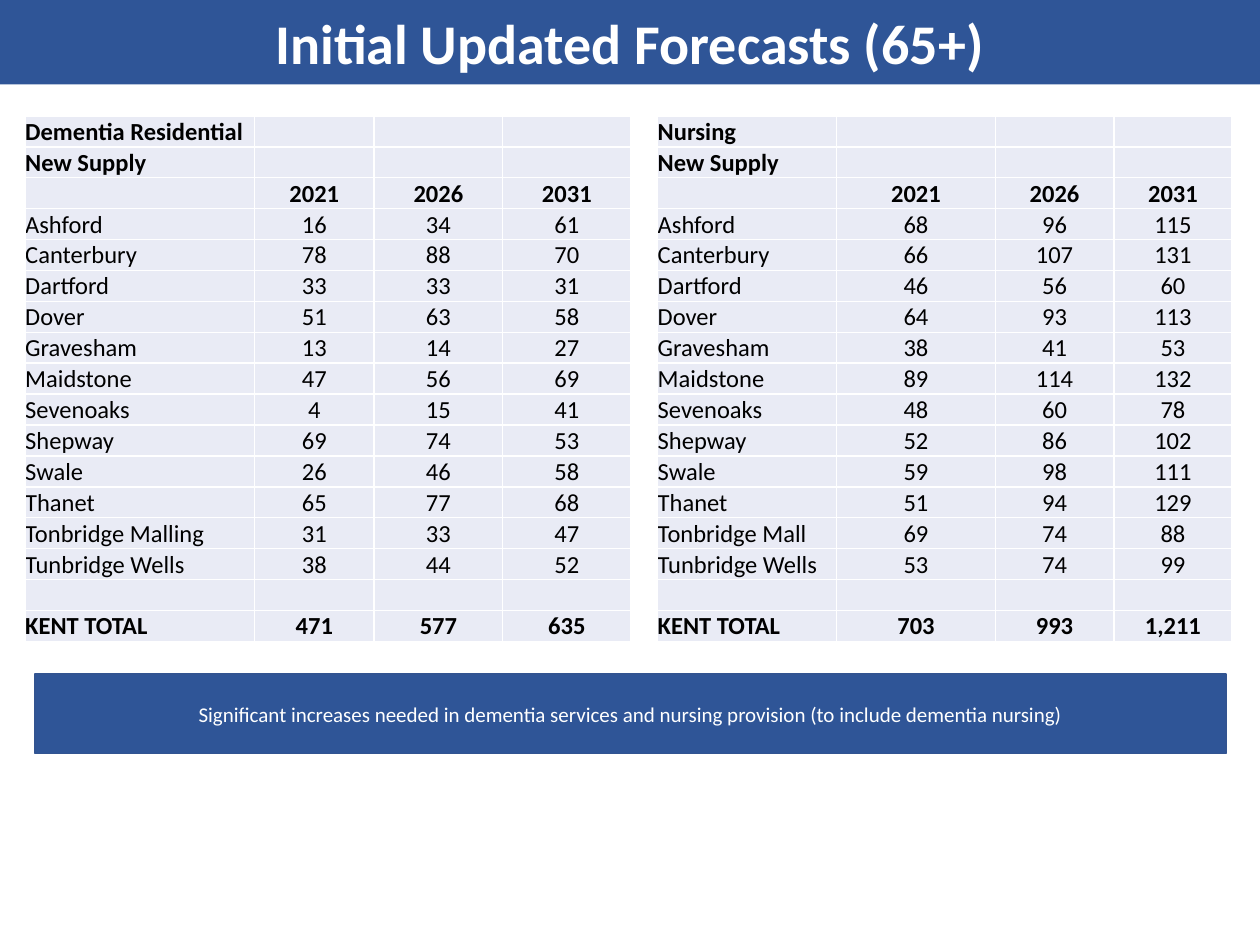
from lxml import etree
from pptx import Presentation
from pptx.dml.color import RGBColor
from pptx.enum.shapes import MSO_SHAPE
from pptx.enum.text import MSO_ANCHOR, PP_ALIGN
from pptx.oxml.ns import qn
from pptx.util import Inches, Pt

BLUE = RGBColor(0x2F, 0x55, 0x97)
DARK_BLUE = RGBColor(0x32, 0x54, 0x91)
PALE = RGBColor(0xE9, 0xEB, 0xF5)
WHITE = RGBColor(0xFF, 0xFF, 0xFF)
BLACK = RGBColor(0, 0, 0)
FONT = "Calibri"
TABLE_SIZE = Pt(14)
HEADER_ROWS = 3

YEARS = ["", "2021", "2026", "2031"]
DEMENTIA_ROWS = [
    ["Dementia Residential"], ["New Supply"], YEARS,
    ["Ashford", "16", "34", "61"],
    ["Canterbury", "78", "88", "70"],
    ["Dartford", "33", "33", "31"],
    ["Dover", "51", "63", "58"],
    ["Gravesham", "13", "14", "27"],
    ["Maidstone", "47", "56", "69"],
    ["Sevenoaks", "4", "15", "41"],
    ["Shepway", "69", "74", "53"],
    ["Swale", "26", "46", "58"],
    ["Thanet", "65", "77", "68"],
    ["Tonbridge Malling", "31", "33", "47"],
    ["Tunbridge Wells", "38", "44", "52"],
    [],
    ["KENT TOTAL", "471", "577", "635"],
]
NURSING_ROWS = [
    ["Nursing"], ["New Supply"], YEARS,
    ["Ashford", "68", "96", "115"],
    ["Canterbury", "66", "107", "131"],
    ["Dartford", "46", "56", "60"],
    ["Dover", "64", "93", "113"],
    ["Gravesham", "38", "41", "53"],
    ["Maidstone", "89", "114", "132"],
    ["Sevenoaks", "48", "60", "78"],
    ["Shepway", "52", "86", "102"],
    ["Swale", "59", "98", "111"],
    ["Thanet", "51", "94", "129"],
    ["Tonbridge Mall", "69", "74", "88"],
    ["Tunbridge Wells", "53", "74", "99"],
    [],
    ["KENT TOTAL", "703", "993", "1,211"],
]


def add_text(paragraph, text, size, color, bold=False):
    run = paragraph.add_run()
    run.text = text
    run.font.name = FONT
    run.font.size = size
    run.font.bold = bold
    run.font.color.rgb = color


def add_banner(slide, left, top, width, height, text, size, bold=False, line=None):
    """Blue bar with centred white text."""
    shape = slide.shapes.add_shape(MSO_SHAPE.RECTANGLE, left, top, width, height)
    shape.shadow.inherit = False
    shape.fill.solid()
    shape.fill.fore_color.rgb = BLUE
    if line is None:
        shape.line.fill.background()
    else:
        shape.line.color.rgb = line
        shape.line.width = Pt(1)
    frame = shape.text_frame
    frame.word_wrap = True
    frame.vertical_anchor = MSO_ANCHOR.MIDDLE
    paragraph = frame.paragraphs[0]
    paragraph.alignment = PP_ALIGN.CENTER
    add_text(paragraph, text, size, WHITE, bold)


def style_cell(cell):
    """White borders, pale fill, no margins, text at the bottom."""
    cell.margin_left = cell.margin_right = cell.margin_top = cell.margin_bottom = 0
    cell.vertical_anchor = MSO_ANCHOR.BOTTOM
    properties = cell._tc.get_or_add_tcPr()
    for side in ("a:lnL", "a:lnR", "a:lnT", "a:lnB"):
        border = etree.SubElement(properties, qn(side), w=str(Pt(1)))
        fill = etree.SubElement(border, qn("a:solidFill"))
        etree.SubElement(fill, qn("a:srgbClr"), val=str(WHITE))
    cell.fill.solid()
    cell.fill.fore_color.rgb = PALE


def add_forecast_table(slide, left, top, height, column_widths, rows):
    frame = slide.shapes.add_table(
        len(rows), len(column_widths), left, top, sum(column_widths), height)
    table = frame.table
    table.first_row = table.horz_banding = False
    for column, width in zip(table.columns, column_widths):
        column.width = width
    for row in table.rows:
        row.height = height // len(rows)
    for row_index, values in enumerate(rows):
        bold = row_index < HEADER_ROWS or row_index == len(rows) - 1
        for column_index in range(len(column_widths)):
            cell = table.cell(row_index, column_index)
            style_cell(cell)
            paragraph = cell.text_frame.paragraphs[0]
            if column_index:
                paragraph.alignment = PP_ALIGN.CENTER
            text = values[column_index] if column_index < len(values) else ""
            if text:
                add_text(paragraph, text, TABLE_SIZE, BLACK, bold)
            else:
                # Keeps empty cells from stretching their row
                etree.SubElement(paragraph._p, qn("a:endParaRPr"),
                                 sz=str(int(TABLE_SIZE.pt * 100)))


def main():
    presentation = Presentation()
    presentation.slide_width = Inches(10)
    presentation.slide_height = Inches(7.5)
    slide = presentation.slides.add_slide(presentation.slide_layouts[6])

    # Title bar
    add_banner(slide, 0, 0, presentation.slide_width, Inches(0.67),
               "Initial Updated Forecasts (65+)", Pt(32), bold=True)

    # Forecast tables
    for left, widths, rows in (
        (0.2, (1.82, 0.95, 1.02, 1.02), DEMENTIA_ROWS),
        (5.22, (1.42, 1.26, 0.94, 0.94), NURSING_ROWS),
    ):
        add_forecast_table(slide, Inches(left), Inches(0.92), Inches(4.17),
                           [Inches(width) for width in widths], rows)

    # Conclusion bar
    add_banner(slide, Inches(0.28), Inches(5.35), Inches(9.45), Inches(0.63),
               "Significant increases needed in dementia services and nursing "
               "provision (to include dementia nursing)", Pt(12), line=DARK_BLUE)

    presentation.save("out.pptx")


if __name__ == "__main__":
    main()
